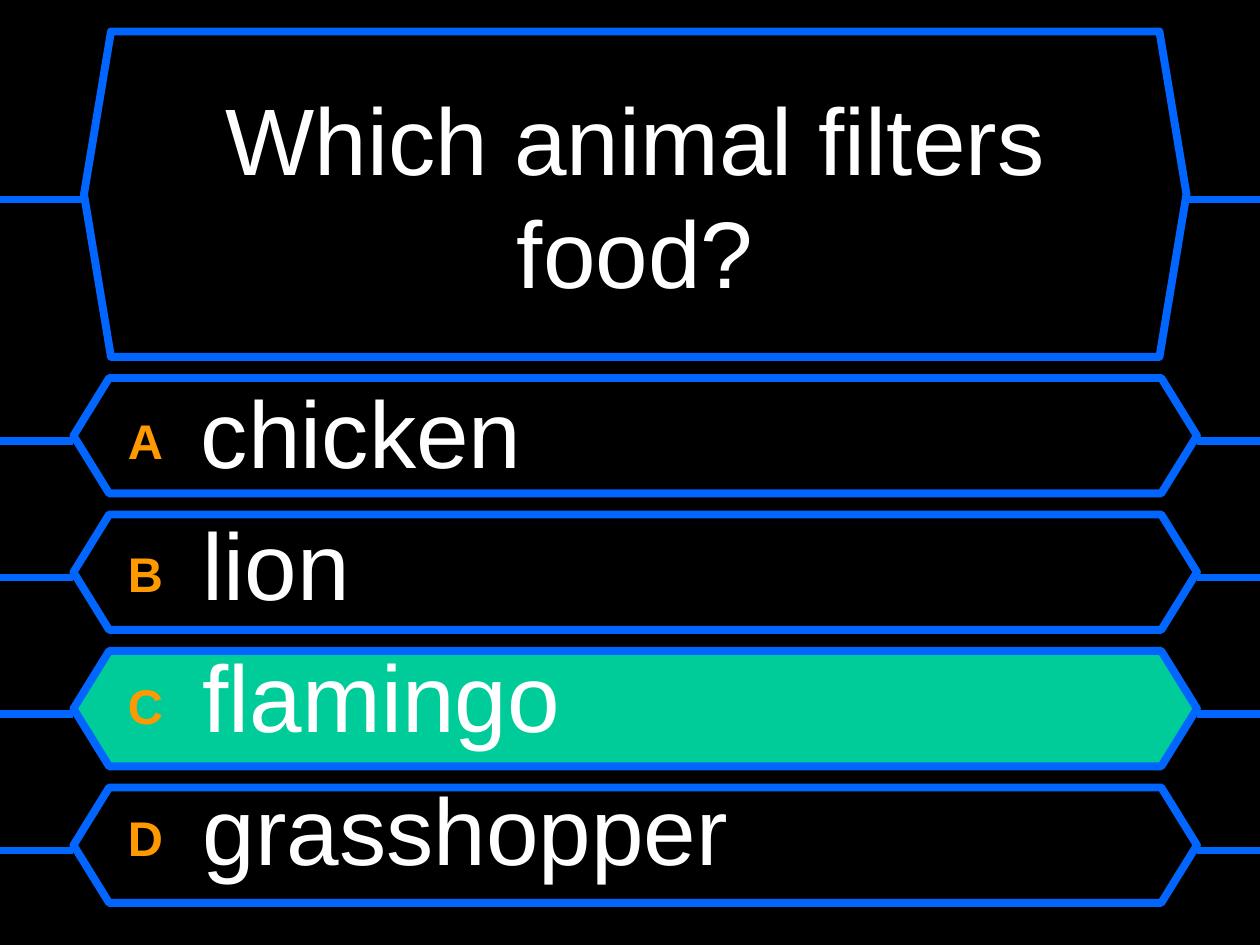
"""Build a quiz slide with one question and four lettered answers."""
import lxml.etree
import pptx
import pptx.dml.color
import pptx.enum.shapes
import pptx.enum.text
import pptx.oxml.ns
import pptx.util


def colour(value):
    """Turn a hex string into a colour."""
    return pptx.dml.color.RGBColor.from_string(value)


class QuizSlide:
    """Holds the style and the slide, measured on a grid of 120 columns by 90 rows."""

    BLACK, WHITE, BLUE, GREEN, ORANGE = "000000", "FFFFFF", "0066FF", "00CC99", "FF9900"
    COLUMNS, ROWS = 120, 90
    FONT, TEXT_SIZE, LETTER_SIZE, LINE_WIDTH = "Arial", 54, 48, 4.5

    def __init__(self, presentation):
        """Add a title-only slide with a black background."""
        self.cell_width = presentation.slide_width / self.COLUMNS
        self.cell_height = presentation.slide_height / self.ROWS
        self.slide = presentation.slides.add_slide(presentation.slide_layouts[5])
        self.slide.background.fill.solid()
        self.slide.background.fill.fore_color.rgb = colour(self.BLACK)

    def place(self, column, row):
        """Return the lengths of a number of columns and rows."""
        return round(column * self.cell_width), round(row * self.cell_height)

    def box(self, column, row, columns, rows):
        """Return left, top, width and height of a grid area."""
        return *self.place(column, row), *self.place(columns, rows)

    def style_line(self, line):
        """Apply the blue outline."""
        line.color.rgb = colour(self.BLUE)
        line.width = pptx.util.Pt(self.LINE_WIDTH)

    def style_run(self, run, size, value, bold=False):
        """Apply font, size, colour and weight."""
        run.font.name = self.FONT
        run.font.size = pptx.util.Pt(size)
        run.font.color.rgb = colour(value)
        run.font.bold = bold

    def rail(self, start, end, row):
        """Draw a horizontal line between two columns."""
        connector = self.slide.shapes.add_connector(
            pptx.enum.shapes.MSO_CONNECTOR.STRAIGHT,
            *self.place(start, row), *self.place(end, row))
        self.style_line(connector.line)
        lxml.etree.SubElement(connector._element.spPr, pptx.oxml.ns.qn("a:effectLst"))

    def panel(self, column, row, columns, rows, rail_row, point, fill):
        """Draw a hexagon with a rail to each slide edge."""
        shape = self.slide.shapes.add_shape(
            pptx.enum.shapes.MSO_SHAPE.HEXAGON, *self.box(column, row, columns, rows))
        shape.adjustments[0] = point
        shape.shadow.inherit = False
        shape.fill.solid()
        shape.fill.fore_color.rgb = colour(fill)
        self.style_line(shape.line)
        self.rail(column, 0, rail_row)
        self.rail(self.COLUMNS, column + columns, rail_row)

    def question(self, text, *area):
        """Fill the title and bring it in front of its panel."""
        title = self.slide.shapes.title
        title.left, title.top, title.width, title.height = self.box(*area)
        frame = title.text_frame
        frame.text = text
        frame.word_wrap = True
        frame.auto_size = pptx.enum.text.MSO_AUTO_SIZE.NONE
        frame.vertical_anchor = pptx.enum.text.MSO_ANCHOR.MIDDLE
        paragraph = frame.paragraphs[0]
        paragraph.alignment = pptx.enum.text.PP_ALIGN.CENTER
        self.style_run(paragraph.runs[0], self.TEXT_SIZE, self.WHITE)
        self.slide.shapes._spTree.append(title._element)

    def answers(self, answers, *area):
        """Write one paragraph for each lettered answer."""
        frame = self.slide.shapes.add_textbox(*self.box(*area)).text_frame
        frame.word_wrap = True
        for index, (letter, answer) in enumerate(answers):
            paragraph = frame.add_paragraph() if index else frame.paragraphs[0]
            properties = paragraph._p.get_or_add_pPr()
            indent = pptx.util.Inches(0.38)
            properties.set("marL", str(indent))
            properties.set("indent", str(-indent))
            before = lxml.etree.SubElement(properties, pptx.oxml.ns.qn("a:spcBef"))
            lxml.etree.SubElement(before, pptx.oxml.ns.qn("a:spcPct"), val="20000")
            label, word = paragraph.add_run(), paragraph.add_run()
            label.text, word.text = f"{letter} ", f" {answer}"
            self.style_run(label, self.LETTER_SIZE, self.ORANGE, bold=True)
            label.font._element.set("baseline", "10000")
            self.style_run(word, self.TEXT_SIZE, self.WHITE)


def main():
    """Build and save the presentation."""
    presentation = pptx.Presentation()
    presentation.slide_width = pptx.util.Inches(10)
    presentation.slide_height = pptx.util.Inches(7.5)
    quiz = QuizSlide(presentation)
    answers = {"A": "chicken", "B": "lion", "C": "flamingo", "D": "grasshopper"}
    correct = "C"
    quiz.panel(8, 3, 105, 31, 19, 0.083, quiz.BLACK)
    for index, letter in enumerate(answers):
        row = 36 + 13 * index
        fill = quiz.GREEN if letter == correct else quiz.BLACK
        quiz.panel(7, row, 107, 11, row + 6, 0.309, fill)
    quiz.question("Which animal filters food?", 10, 5, 101, 27)
    quiz.answers(answers.items(), 11, 35, 100, 52)
    presentation.save("out.pptx")


if __name__ == "__main__":
    main()
